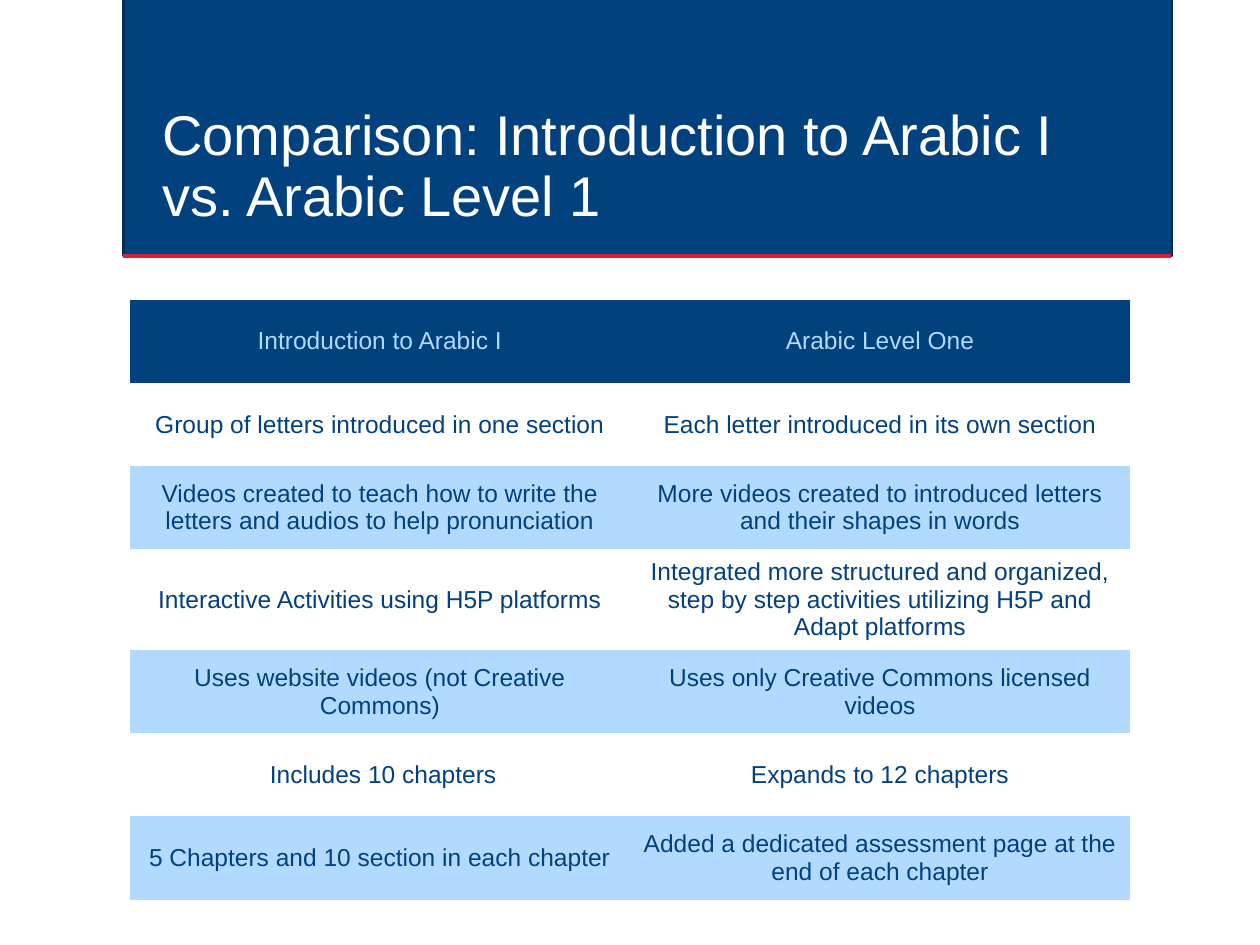
from pptx import Presentation
from pptx.dml.color import RGBColor
from pptx.enum import shapes, text
from pptx.oxml.ns import qn
from pptx.util import Inches, Pt
from lxml import etree

COLORS = {
    "navy": "00417E",
    "edge": "002F5B",
    "red": "DE1F37",
    "sky": "B2DAFF",
    "white": "FFFFFF",
}
NO_GRID_STYLE = "{2D5ABB26-0587-4C30-8999-92F81FD0307C}"
ROWS = [
    ("Introduction to Arabic I", "Arabic Level One"),
    ("Group of letters introduced in one section", "Each letter introduced in its own section"),
    ("Videos created to teach how to write the letters and audios to help pronunciation",
     "More videos created to introduced letters and their shapes in words"),
    ("Interactive Activities using H5P platforms",
     "Integrated more structured and organized, step by step activities utilizing H5P and Adapt platforms"),
    ("Uses website videos (not Creative Commons)", "Uses only Creative Commons licensed videos"),
    (" Includes 10 chapters", "Expands to 12 chapters"),
    ("5 Chapters and 10 section in each chapter",
     "Added a dedicated assessment page at the end of each chapter"),
]
ROW_HEIGHTS = [0.66, 0.66, 0.66, 0.76, 0.66, 0.66, 0.66]


class Painter:
    """Holds the style and the current slide, and draws each kind of element."""

    def __init__(self, page, font="Arial"):
        self.page = page
        self.font = font

    def color(self, name):
        return RGBColor.from_string(COLORS[name])

    def style(self, paragraph, size, color):
        for span in paragraph.runs:
            span.font.name = self.font
            span.font.size = Pt(size)
            span.font.color.rgb = self.color(color)

    def band(self, left, top, width, height, fill, line):
        box = self.page.shapes.add_shape(
            shapes.MSO_SHAPE.RECTANGLE, Inches(left), Inches(top), Inches(width), Inches(height))
        box.shadow.inherit = False
        box.fill.solid()
        box.fill.fore_color.rgb = self.color(fill)
        box.line.color.rgb = self.color(line)
        box.line.width = Pt(1.25)

    def rule(self, left, right, y, color):
        line = self.page.shapes.add_connector(
            shapes.MSO_CONNECTOR.STRAIGHT, Inches(left), Inches(y), Inches(right), Inches(y))
        line.line.color.rgb = self.color(color)
        line.line.width = Pt(2.5)
        etree.SubElement(line._element.spPr, qn("a:effectLst"))

    def title(self, left, top, width, height, words):
        box = self.page.shapes.add_textbox(Inches(left), Inches(top), Inches(width), Inches(height))
        frame = box.text_frame
        frame.word_wrap = True
        frame.vertical_anchor = text.MSO_ANCHOR.BOTTOM
        frame.text = words
        paragraph = frame.paragraphs[0]
        paragraph.line_spacing = 0.9
        self.style(paragraph, 32, "white")

    def table(self, left, top, width, rows, heights):
        table = self.page.shapes.add_table(
            len(rows), len(rows[0]), Inches(left), Inches(top),
            Inches(width), Inches(sum(heights))).table
        table._tbl.tblPr.find(qn("a:tableStyleId")).text = NO_GRID_STYLE
        table.first_row = True
        table.horz_banding = False
        for index, (words, height) in enumerate(zip(rows, heights)):
            table.rows[index].height = Inches(height)
            for column, value in enumerate(words):
                self.cell(table.cell(index, column), value, index)

    def cell(self, cell, words, index):
        cell.text = words
        cell.vertical_anchor = text.MSO_ANCHOR.MIDDLE
        if index % 2:
            cell.fill.background()
        else:
            cell.fill.solid()
            cell.fill.fore_color.rgb = self.color("sky" if index else "navy")
        paragraph = cell.text_frame.paragraphs[0]
        paragraph.alignment = text.PP_ALIGN.CENTER
        self.style(paragraph, 14, "navy" if index else "sky")


def main():
    deck = Presentation()
    deck.slide_width = Inches(10)
    deck.slide_height = Inches(7.5)
    painter = Painter(deck.slides.add_slide(deck.slide_layouts[6]))
    painter.band(0.98, -0.02, 8.32, 2.05, "navy", "edge")
    painter.rule(0.98, 9.29, 2.03, "red")
    painter.title(1.19, 0.88, 7.88, 0.98, "Comparison: Introduction to Arabic I vs. Arabic Level 1")
    painter.table(1.03, 2.38, 7.94, ROWS, ROW_HEIGHTS)
    deck.save("out.pptx")


if __name__ == "__main__":
    main()
